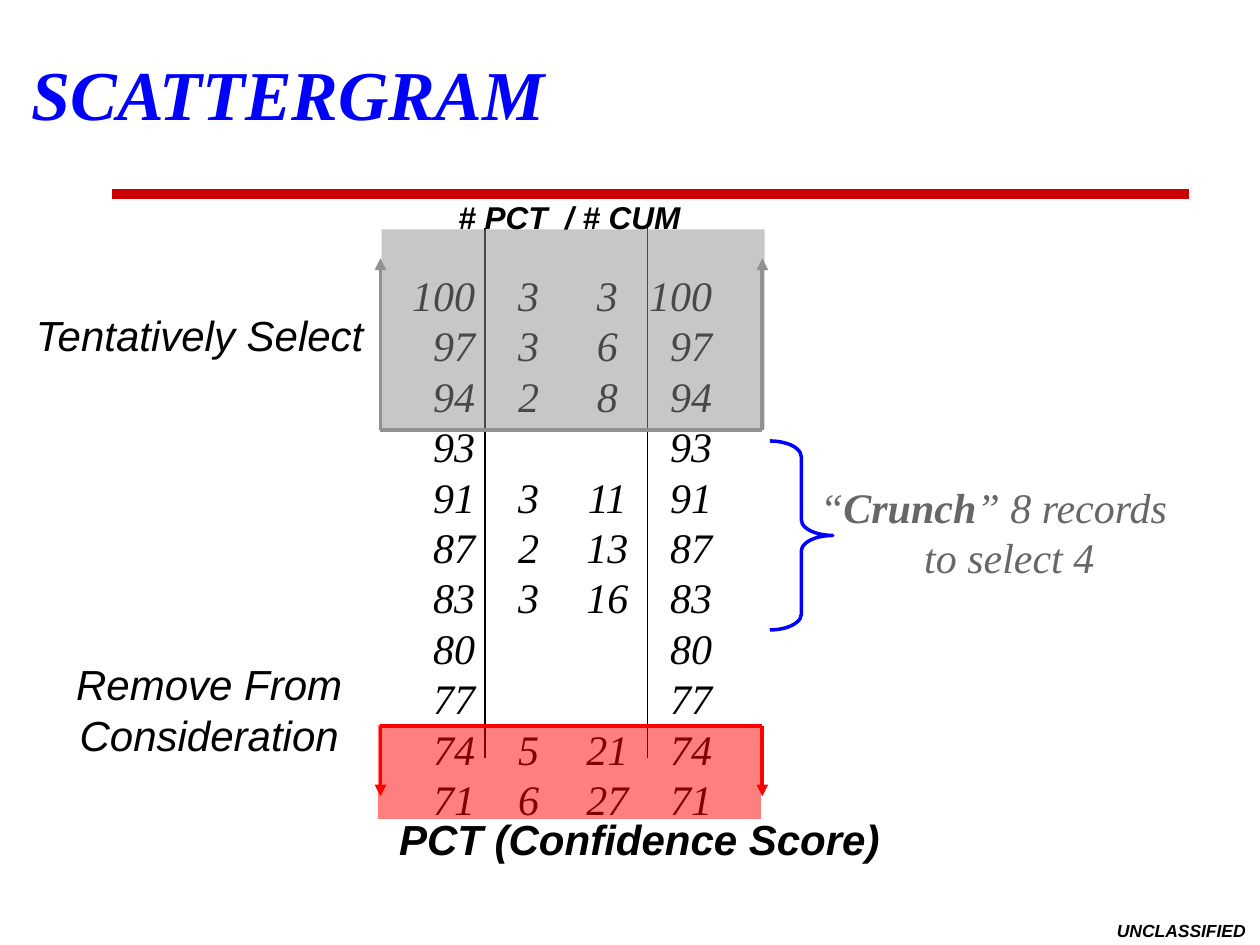
from lxml.etree import SubElement
from pptx import Presentation
from pptx.dml.color import RGBColor
from pptx.enum.shapes import MSO_CONNECTOR, MSO_SHAPE
from pptx.enum.text import MSO_ANCHOR, PP_ALIGN as Align
from pptx.oxml.ns import qn
from pptx.util import Inches, Pt

COLORS = {"title": "0000FF", "rule": "CC0000", "text": "000000", "brace": "0000FF",
          "note": "676767", "remove": "FF0000", "select": "919191"}
SERIF, SANS = "Times New Roman", "Arial"
LINE_PITCH = 28.8

# Content: None marks a score with no records
SCORES = [100, 97, 94, 93, 91, 87, 83, 80, 77, 74, 71]
COUNTS = [3, 3, 2, None, 3, 2, 3, None, None, 5, 6]
TOTALS = [3, 6, 8, None, 11, 13, 16, None, None, 21, 27]
COLUMNS = [  # left, width, alignment, values
    (3.16, 0.71, Align.RIGHT, SCORES),
    (5.04, 0.71, Align.RIGHT, SCORES),
    (4.01, 0.37, Align.CENTER, COUNTS),
    (4.55, 0.54, Align.CENTER, TOTALS),
]
LABELS = [  # lines, box, size, bold
    (["Tentatively Select"], (0.17, 2.41, 2.83, 0.5), 24, False),
    (["Remove From", "Consideration"], (0.49, 5.18, 2.34, 0.91), 24, False),
    (["# PCT  / # CUM"], (2.75, 1.52, 3.54, 0.4), 18, True),
    (["PCT (Confidence Score)"], (3.05, 6.41, 4.05, 0.51), 24, True),
    (["UNCLASSIFIED"], (8.75, 7.25, 1.25, 0.25), 10, True),
]
NOTE = [[("“", False), ("Crunch", True), ("” 8 records", False)],
        [("to select 4", False)]]
ZONES = [  # color, shaded box, base line y, arrow tip y
    ("remove", (3, 5.75, 3.04, 0.75), 5.76, 6.32),
    ("select", (3.03, 1.82, 3.04, 1.58), 3.41, 2.05),
]

prs = Presentation()
prs.slide_width, prs.slide_height = Inches(10), Inches(7.5)
slide = prs.slides.add_slide(prs.slide_layouts[5])
shapes = slide.shapes


def rgb(name):
    return RGBColor.from_string(COLORS[name])


def style(font, size, face, color="text", bold=False):
    font.size, font.name, font.bold, font.italic = Pt(size), face, bold, True
    font.color.rgb = rgb(color)


def add_line(x1, y1, x2, y2, color, width, arrow=False):
    line = shapes.add_connector(MSO_CONNECTOR.STRAIGHT, *map(Inches, (x1, y1, x2, y2)))
    line.line.color.rgb, line.line.width = rgb(color), Pt(width)
    if arrow:
        SubElement(line.line._get_or_add_ln(), qn("a:tailEnd"), type="triangle")
    SubElement(line._element.spPr, qn("a:effectLst"))


def add_text(box, paragraphs, size, face, color="text", bold=False, align=Align.CENTER):
    """Add a text box; each paragraph is a string or a list of (text, bold) runs."""
    frame = shapes.add_textbox(*map(Inches, box)).text_frame
    frame.word_wrap = False
    for i, content in enumerate(paragraphs):
        par = frame.paragraphs[0] if i == 0 else frame.add_paragraph()
        par.alignment = align
        if len(paragraphs) > 1:
            par.line_spacing = Pt(LINE_PITCH)
        style(par.font, size, face, color, bold)
        runs = [(content, bold)] if isinstance(content, str) else content
        for text, strong in runs:
            run = par.add_run()
            run.text = text
            if strong != bold:
                run.font.bold = strong
    return frame


# Title and rule
title = shapes.title
title.left, title.top, title.width, title.height = map(Inches, (0.15, 0.35, 8.42, 0.77))
title.text_frame.text = "SCATTERGRAM"
title.text_frame.vertical_anchor = MSO_ANCHOR.MIDDLE
heading = title.text_frame.paragraphs[0]
heading.alignment = Align.LEFT
style(heading.font, 40, SERIF, "title", True)
add_line(0.89, 1.54, 9.44, 1.54, "rule", 6)

# Score columns, with one line of space for each missing value
for left, width, align, values in COLUMNS:
    present = [i for i, value in enumerate(values) if value is not None]
    column = add_text((left, 2.09, width, 4.54), [str(values[i]) for i in present],
                      24, SERIF, align=align)
    for par, before, row in zip(column.paragraphs[1:], present, present[1:]):
        if row - before > 1:
            par.space_before = Pt(LINE_PITCH * (row - before - 1))
for x in (3.85, 5.14):
    add_line(x, 1.81, x, 6.02, "text", 0.75)

# Brace and its note
brace = shapes.add_shape(MSO_SHAPE.RIGHT_BRACE, *map(Inches, (6.11, 3.5, 0.5, 1.5)))
brace.adjustments[0], brace.adjustments[1] = 0.25, 0.5
brace.shadow.inherit = False
brace.fill.background()
brace.line.color.rgb, brace.line.width = rgb("brace"), Pt(2)
note = add_text((6.39, 3.77, 2.99, 0.91), NOTE, 24, SERIF, "note")
note.paragraphs[1]._p.get_or_add_pPr().set("marL", str(Pt(18)))

# Shaded zones with bracket arrows
for color, box, base, tip in ZONES:
    left, right = 3.02, 6.05
    add_line(left, base, right, base, color, 2.25)
    for x in (left, right):
        add_line(x, base, x, tip, color, 2.25, arrow=True)
    zone = shapes.add_shape(MSO_SHAPE.RECTANGLE, *map(Inches, box))
    zone.shadow.inherit = False
    zone.fill.solid()
    zone.fill.fore_color.rgb = rgb(color)
    SubElement(zone._element.spPr.find(".//" + qn("a:srgbClr")), qn("a:alpha"), val="50000")
    zone.line.fill.background()

# Labels
for lines, box, size, bold in LABELS:
    add_text(box, lines, size, SANS, bold=bold)

prs.save("out.pptx")
